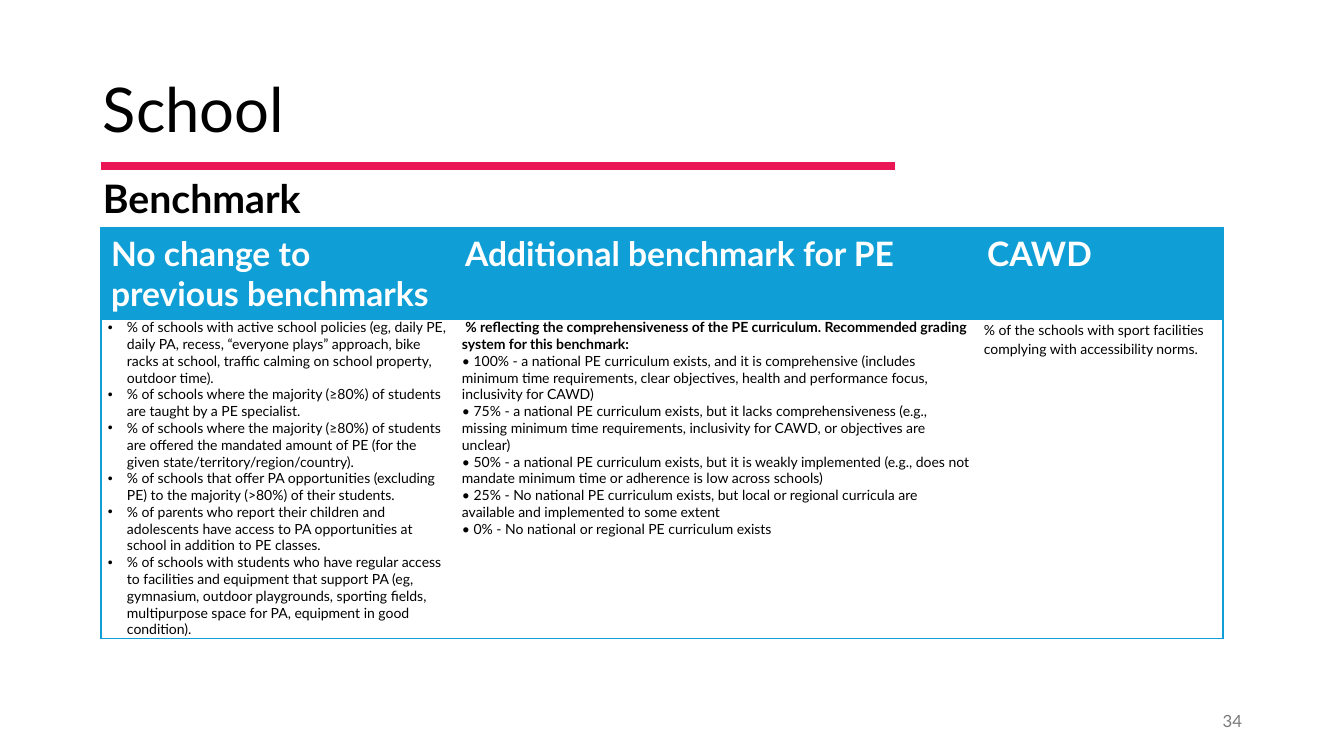
from dataclasses import dataclass

from lxml.etree import SubElement
from pptx import Presentation
from pptx.dml.color import RGBColor as Rgb
from pptx.enum.shapes import MSO_CONNECTOR as Connector
from pptx.enum.text import MSO_ANCHOR as Anchor, PP_ALIGN as Align
from pptx.oxml.ns import qn
from pptx.util import Pt

# Content
TITLE = "School"
SUBTITLE = "Benchmark"
PAGE_NUMBER = "34"
HEADERS = ["No change to previous benchmarks", "Additional benchmark for PE", "CAWD"]
UNCHANGED = [
    "% of schools with active school policies (eg, daily PE, daily PA, recess, “everyone plays” approach, bike racks at school, traffic calming on school property, outdoor time).",
    "% of schools where the majority (≥80%) of students are taught by a PE specialist.",
    "% of schools where the majority (≥80%) of students are offered the mandated amount of PE (for the given state/territory/region/country).",
    "% of schools that offer PA opportunities (excluding PE) to the majority (>80%) of their students.",
    "% of parents who report their children and adolescents have access to PA opportunities at school in addition to PE classes.",
    "% of schools with students who have regular access to facilities and equipment that support PA (eg, gymnasium, outdoor playgrounds, sporting fields, multipurpose space for PA, equipment in good condition).",
]
GRADING_LEAD = " % reflecting the comprehensiveness of the PE curriculum. Recommended grading system for this benchmark:"
GRADES = [
    "• 100% - a national PE curriculum exists, and it is comprehensive (includes minimum time requirements, clear objectives, health and performance focus, inclusivity for CAWD)",
    "• 75% - a national PE curriculum exists, but it lacks comprehensiveness (e.g., missing minimum time requirements, inclusivity for CAWD, or objectives are unclear)",
    "• 50% - a national PE curriculum exists, but it is weakly implemented (e.g., does not mandate minimum time or adherence is low across schools)",
    "• 25% - No national PE curriculum exists, but local or regional curricula are available and implemented to some extent",
    "• 0% - No national or regional PE curriculum exists",
]
ACCESS = "% of the schools with sport facilities complying with accessibility norms."


@dataclass(frozen=True)
class Theme:
    font: str = "Lato"
    ink: str = "000000"
    paper: str = "FFFFFF"
    grey: str = "797979"
    blue: str = "0F9ED5"
    pink: str = "EA1656"
    title: int = 44
    subtitle: int = 28
    header: int = 24
    number: int = 12
    body: int = 10


THEME = Theme()
PAGE_W, PAGE_H = 1344, 756
SCALE = 12192000 / PAGE_W
COLUMNS = [354, 522, 246]
ROWS = [91, 319]
TABLE_LEFT, TABLE_TOP = 101, 228
BULLET_INDENT = 19
PLAIN_STYLE = "{2D5ABB26-0587-4C30-8999-92F81FD0307C}"


def px(length):
    return round(length * SCALE)


def add_span(para, text, size, color=THEME.ink, bold=False):
    span = para.add_run()
    span.text = text
    span.font.name = THEME.font
    span.font.size = Pt(size)
    span.font.bold = bold
    span.font.color.rgb = Rgb.from_string(color)


def add_text(page, area, text, size, color=THEME.ink, bold=False,
             anchor=Anchor.TOP, align=Align.LEFT):
    frame = page.shapes.add_textbox(*map(px, area)).text_frame
    frame.word_wrap = True
    frame.vertical_anchor = anchor
    para = frame.paragraphs[0]
    para.alignment = align
    add_span(para, text, size, color, bold)
    return para


def add_bullet(para):
    props = para._p.get_or_add_pPr()
    props.set("marL", str(px(BULLET_INDENT)))
    props.set("indent", str(-px(BULLET_INDENT)))
    SubElement(props, qn("a:buFont"), typeface="Arial")
    SubElement(props, qn("a:buChar"), char="•")


def add_borders(cell, sides):
    props = cell._tc.get_or_add_tcPr()
    for side in sides:
        line = SubElement(props, qn(f"a:ln{side}"), w=str(Pt(1)))
        fill = SubElement(line, qn("a:solidFill"))
        SubElement(fill, qn("a:srgbClr"), val=THEME.blue)


def fill_body(cell, lines, bulleted=False, bold_first=False):
    frame = cell.text_frame
    for index, text in enumerate(lines):
        para = frame.add_paragraph() if index else frame.paragraphs[0]
        if bulleted:
            add_bullet(para)
        add_span(para, text, THEME.body, bold=bold_first and index == 0)


def add_benchmark_table(page):
    area = (TABLE_LEFT, TABLE_TOP, sum(COLUMNS), sum(ROWS))
    table = page.shapes.add_table(len(ROWS), len(COLUMNS), *map(px, area)).table
    table._tbl.tblPr.find(qn("a:tableStyleId")).text = PLAIN_STYLE
    table.horz_banding = False
    for column, width in zip(table.columns, COLUMNS):
        column.width = px(width)
    for row, height in zip(table.rows, ROWS):
        row.height = px(height)

    # Outline, fills and body margins
    last = len(COLUMNS) - 1
    for r in range(len(ROWS)):
        for c in range(len(COLUMNS)):
            cell = table.cell(r, c)
            sides = ("L" if c == 0 else "") + ("R" if c == last else "") + "T"
            add_borders(cell, sides + ("B" if r else ""))
            cell.fill.solid()
            cell.fill.fore_color.rgb = Rgb.from_string(THEME.paper if r else THEME.blue)
            if r:
                cell.margin_left = cell.margin_right = px(7)
                cell.margin_top = cell.margin_bottom = 0

    # Text
    for c, header in enumerate(HEADERS):
        para = table.cell(0, c).text_frame.paragraphs[0]
        add_span(para, header, THEME.header, THEME.paper, True)
    fill_body(table.cell(1, 0), UNCHANGED, bulleted=True)
    fill_body(table.cell(1, 1), [GRADING_LEAD] + GRADES, bold_first=True)
    fill_body(table.cell(1, 2), [ACCESS])
    access = table.cell(1, 2).text_frame.paragraphs[0]
    access.line_spacing = 1.16
    access.space_after = Pt(8)


def main():
    deck = Presentation()
    deck.slide_width, deck.slide_height = px(PAGE_W), px(PAGE_H)
    page = deck.slides.add_slide(deck.slide_layouts[6])

    # Title and page number
    title = add_text(page, (93, 40, 1159, 146), TITLE, THEME.title, anchor=Anchor.MIDDLE)
    title.line_spacing = 0.9
    add_text(page, (950, 701, 302, 40), PAGE_NUMBER, THEME.number, THEME.grey,
             anchor=Anchor.MIDDLE, align=Align.RIGHT)

    # Rule under the title
    rule = page.shapes.add_connector(Connector.STRAIGHT, px(101), px(166), px(895), px(166))
    rule.line.color.rgb = Rgb.from_string(THEME.pink)
    rule.line.width = Pt(6)
    SubElement(rule._element.spPr, qn("a:effectLst"))

    # Benchmarks
    add_text(page, (93, 169, 283, 57), SUBTITLE, THEME.subtitle, bold=True)
    add_benchmark_table(page)
    deck.save("out.pptx")


if __name__ == "__main__":
    main()
